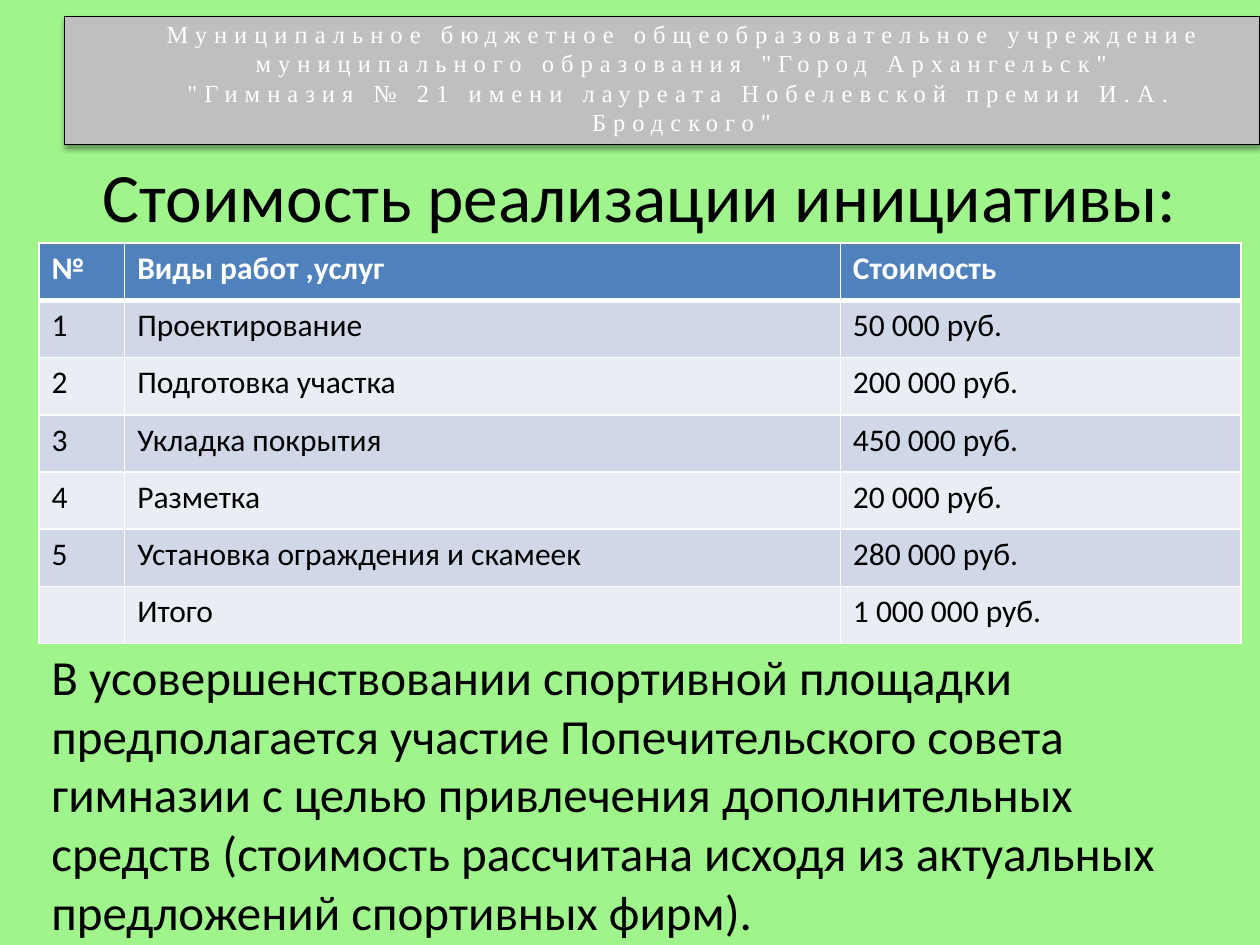
from dataclasses import dataclass

import pptx
import pptx.dml.color
import pptx.enum.shapes
import pptx.enum.text
import pptx.oxml
import pptx.oxml.ns
import pptx.util

# The 10 x 7.5 inch page is a grid of 1000 columns and 750 rows.
GRID_COLUMNS, GRID_ROWS = 1000, 750
CELL = pptx.util.Inches(10) // GRID_COLUMNS

COLORS = {
    "page": "A0F48C",
    "banner": "BFBFBF",
    "black": "000000",
    "white": "FFFFFF",
    "header": "4F81BD",
    "odd": "D0D8E8",
    "even": "E9EDF4",
}
ALIGN = pptx.enum.text.PP_ALIGN
ANCHOR = pptx.enum.text.MSO_ANCHOR


@dataclass(frozen=True)
class Area:
    column: int
    row: int
    columns: int
    rows: int

    def lengths(self) -> list[int]:
        return [n * CELL for n in (self.column, self.row, self.columns, self.rows)]


@dataclass(frozen=True)
class TextStyle:
    size: float
    color: str = "black"
    font: str = "Calibri"
    bold: bool = False
    spacing: int = 0
    align: ALIGN = ALIGN.LEFT


@dataclass(frozen=True)
class TextBlock:
    area: Area
    lines: tuple[str, ...]
    style: TextStyle
    anchor: ANCHOR = ANCHOR.TOP


BANNER = Area(51, 13, 949, 102)
TEXT_BLOCKS = (
    TextBlock(
        Area(98, 10, 886, 104),
        (
            "Муниципальное бюджетное общеобразовательное учреждение",
            'муниципального образования "Город Архангельск"',
            '"Гимназия № 21 имени лауреата Нобелевской премии И.А. Бродского"',
        ),
        TextStyle(14, "white", "Times New Roman", spacing=4, align=ALIGN.CENTER),
    ),
    TextBlock(
        Area(58, 92, 900, 125),
        ("Стоимость реализации инициативы:",),
        TextStyle(39.6, align=ALIGN.CENTER),
        ANCHOR.MIDDLE,
    ),
    TextBlock(
        Area(31, 508, 953, 246),
        (
            "В усовершенствовании спортивной площадки предполагается участие "
            "Попечительского совета гимназии с целью привлечения дополнительных "
            "средств (стоимость рассчитана исходя из актуальных предложений "
            "спортивных фирм).",
        ),
        TextStyle(28),
    ),
)

COSTS_AREA = Area(31, 193, 953, 318)
COSTS_COLUMNS = (68, 568, 318)
COSTS = (
    ("№", "Виды работ ,услуг", "Стоимость"),
    ("1", "Проектирование", "50 000 руб."),
    ("2", "Подготовка участка", "200 000 руб."),
    ("3", "Укладка покрытия", "450 000 руб."),
    ("4", "Разметка", "20 000 руб."),
    ("5", "Установка ограждения и скамеек", "280 000 руб."),
    ("", "Итого", "1 000 000 руб."),
)


def rgb(name: str) -> pptx.dml.color.RGBColor:
    return pptx.dml.color.RGBColor.from_string(COLORS[name])


def set_fill(target, color: str) -> None:
    target.fill.solid()
    target.fill.fore_color.rgb = rgb(color)


def parse_drawing(xml: str):
    """Turn DrawingML text into an element, adding the namespace to its root."""
    namespace = pptx.oxml.ns.nsdecls("a")
    return pptx.oxml.parse_xml(xml.replace(" ", f" {namespace} ", 1))


def write_text(frame, lines: tuple[str, ...], style: TextStyle) -> None:
    for index, line in enumerate(lines):
        paragraph = frame.paragraphs[0] if index == 0 else frame.add_paragraph()
        paragraph.alignment = style.align
        span = paragraph.add_run()
        span.text = line
        formats = {
            "size": pptx.util.Pt(style.size),
            "name": style.font,
            "bold": style.bold,
        }
        for name, value in formats.items():
            setattr(span.font, name, value)
        span.font.color.rgb = rgb(style.color)
        if style.spacing:
            span.font._element.set("spc", str(style.spacing * 100))


def draw_banner(page, area: Area) -> None:
    banner = page.shapes.add_shape(
        pptx.enum.shapes.MSO_SHAPE.RECTANGLE, *area.lengths()
    )
    set_fill(banner, "banner")
    banner.line.color.rgb = rgb("black")
    banner.line.width = pptx.util.Pt(0.75)
    banner.shadow.inherit = False
    effects = banner._element.spPr.find(pptx.oxml.ns.qn("a:effectLst"))
    blur, distance = pptx.util.Pt(3.1), pptx.util.Pt(1.6)
    effects.append(parse_drawing(
        f'<a:outerShdw blurRad="{blur}" dist="{distance}" dir="5400000" rotWithShape="0">'
        f'<a:srgbClr val="{COLORS["black"]}"><a:alpha val="38000"/></a:srgbClr>'
        "</a:outerShdw>"
    ))


def draw_text(page, block: TextBlock) -> None:
    box = page.shapes.add_textbox(*block.area.lengths())
    box.text_frame.word_wrap = True
    box.text_frame.vertical_anchor = block.anchor
    write_text(box.text_frame, block.lines, block.style)


def set_borders(cell, points: dict[str, int]) -> None:
    """Draw white borders, given by side in schema order L, R, T, B."""
    properties = cell._tc.get_or_add_tcPr()
    for index, (side, width) in enumerate(points.items()):
        properties.insert(index, parse_drawing(
            f'<a:ln{side} w="{pptx.util.Pt(width)}"><a:solidFill>'
            f'<a:srgbClr val="{COLORS["white"]}"/></a:solidFill></a:ln{side}>'
        ))


def draw_costs(page) -> None:
    table = page.shapes.add_table(
        len(COSTS), len(COSTS_COLUMNS), *COSTS_AREA.lengths()
    ).table
    for column, width in zip(table.columns, COSTS_COLUMNS):
        column.width = width * CELL
    for r, texts in enumerate(COSTS):
        header = r == 0
        fill = "header" if header else ("even", "odd")[r % 2]
        style = TextStyle(18, "white" if header else "black", bold=header)
        borders = {"L": 1, "R": 1, "T": 3 if r == 1 else 1, "B": 3 if header else 1}
        for c, text in enumerate(texts):
            cell = table.cell(r, c)
            set_fill(cell, fill)
            set_borders(cell, borders)
            if text:
                write_text(cell.text_frame, (text,), style)


def main() -> None:
    deck = pptx.Presentation()
    deck.slide_width = GRID_COLUMNS * CELL
    deck.slide_height = GRID_ROWS * CELL
    page = deck.slides.add_slide(deck.slide_layouts[6])
    set_fill(page.background, "page")
    draw_banner(page, BANNER)
    for block in TEXT_BLOCKS:
        draw_text(page, block)
    draw_costs(page)
    deck.save("out.pptx")


if __name__ == "__main__":
    main()
